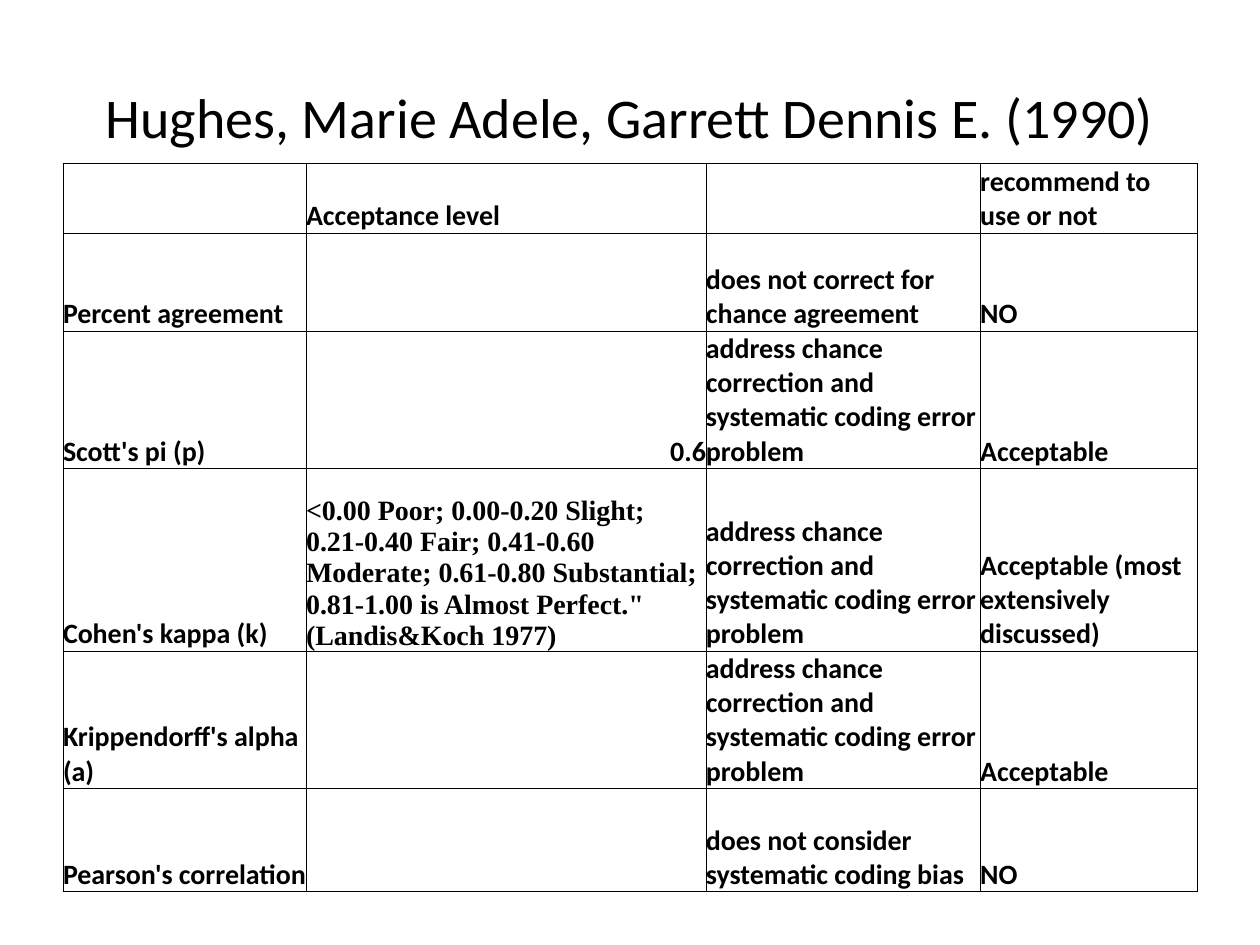
from lxml import etree
from pptx import Presentation
from pptx import util as u
from pptx.dml.color import RGBColor
from pptx.enum import text
from pptx.oxml import ns

BLACK = RGBColor(0x00, 0x00, 0x00)
SANS, SERIF = "Calibri", "Times New Roman"

# Content
TITLE = "Hughes, Marie Adele, Garrett Dennis E. (1990)"
CHANCE = "address chance correction and systematic coding error problem"
KAPPA_LEVELS = (
    "<0.00 Poor; 0.00-0.20 Slight; 0.21-0.40 Fair; 0.41-0.60 Moderate; "
    '0.61-0.80 Substantial; 0.81-1.00 is Almost Perfect." (Landis&Koch 1977)'
)
ROWS = [
    ("", "Acceptance level", "", "recommend to use or not"),
    ("Percent agreement", "", "does not correct for chance agreement", "NO"),
    ("Scott's pi (p)", "0.6", CHANCE, "Acceptable"),
    ("Cohen's kappa (k)", KAPPA_LEVELS, CHANCE,
     "Acceptable (most extensively discussed)"),
    ("Krippendorff's alpha (a)", "", CHANCE, "Acceptable"),
    ("Pearson's correlation", "", "does not consider systematic coding bias", "NO"),
]
COLUMN_WIDTHS = [4.9, 8.06, 5.53, 4.37]
ROW_HEIGHTS = [1.4, 1.98, 2.77, 3.68, 2.77, 2.08]
LEFT, WIDTH = 1.27, 22.86


def set_font(para, size, name=SANS, bold=False):
    font = para.font
    font.size, font.name, font.bold = u.Pt(size), name, bold
    font.color.rgb = BLACK


def clear_margins(holder):
    holder.margin_left = holder.margin_right = 0
    holder.margin_top = holder.margin_bottom = 0


def add_borders(cell):
    properties = cell._tc.get_or_add_tcPr()
    for position, side in enumerate(("lnL", "lnR", "lnT", "lnB")):
        line = etree.Element(ns.qn(f"a:{side}"), w=str(u.Pt(0.5)))
        fill = etree.SubElement(line, ns.qn("a:solidFill"))
        etree.SubElement(fill, ns.qn("a:srgbClr"), val=str(BLACK))
        properties.insert(position, line)


deck = Presentation()
deck.slide_width, deck.slide_height = u.Cm(25.4), u.Cm(19.05)
page = deck.slides.add_slide(deck.slide_layouts[6])

# Title
box = page.shapes.add_textbox(u.Cm(LEFT), u.Cm(0.76), u.Cm(WIDTH), u.Cm(3.18))
frame = box.text_frame
frame.word_wrap = True
frame.vertical_anchor = text.MSO_ANCHOR.MIDDLE
heading = frame.paragraphs[0]
heading.text = TITLE
heading.alignment = text.PP_ALIGN.CENTER
set_font(heading, 32)

# Comparison table
table = page.shapes.add_table(
    len(ROWS), len(COLUMN_WIDTHS), u.Cm(LEFT), u.Cm(3.3),
    u.Cm(WIDTH), u.Cm(sum(ROW_HEIGHTS))).table
table.first_row = table.horz_banding = False
for column, width in zip(table.columns, COLUMN_WIDTHS):
    column.width = u.Cm(width)
for row, height, words in zip(table.rows, ROW_HEIGHTS, ROWS):
    row.height = u.Cm(height)
    for cell, wording in zip(row.cells, words):
        cell.fill.background()
        clear_margins(cell)
        cell.vertical_anchor = text.MSO_ANCHOR.BOTTOM
        add_borders(cell)
        para = cell.text_frame.paragraphs[0]
        para.text = wording
        set_font(para, 16, SERIF if wording == KAPPA_LEVELS else SANS, bold=True)
        if wording == "0.6":
            para.alignment = text.PP_ALIGN.RIGHT

deck.save("out.pptx")
